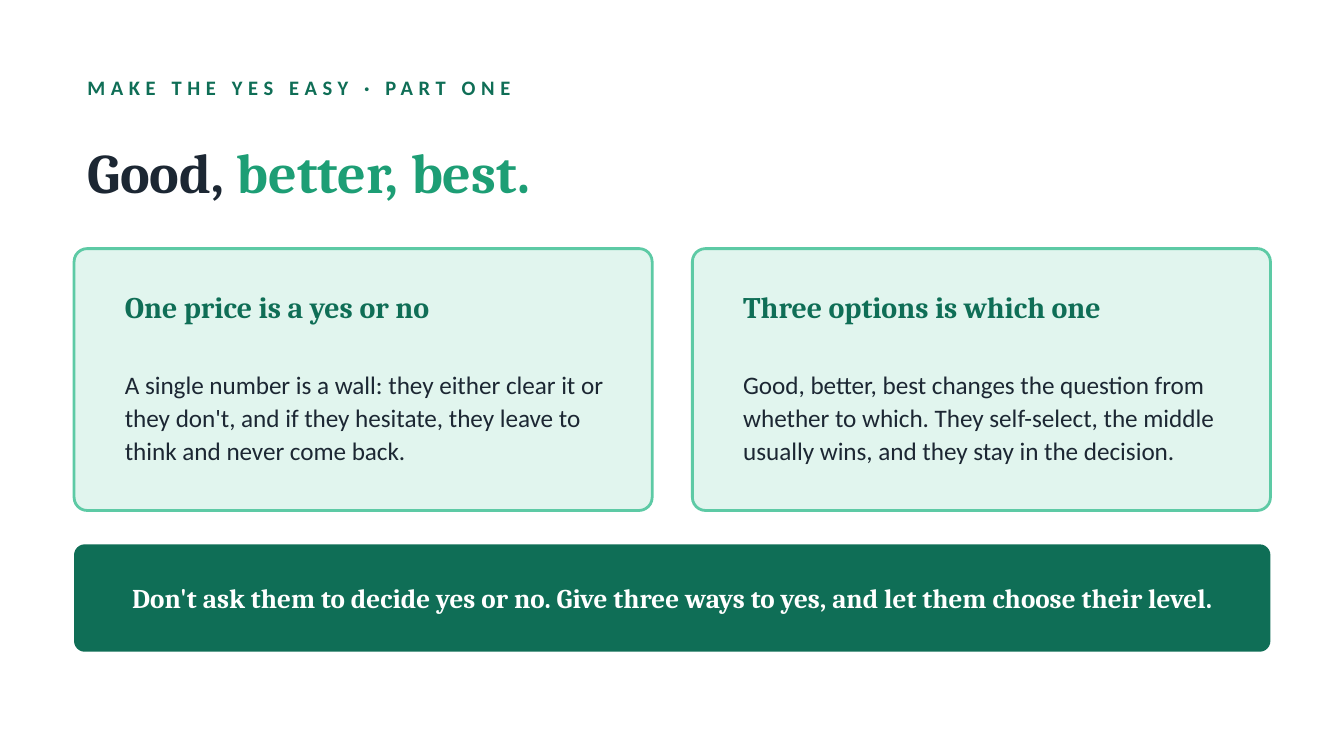
from pptx import Presentation
from pptx.dml.color import RGBColor
from pptx.enum.shapes import MSO_SHAPE
from pptx.enum.text import MSO_ANCHOR, PP_ALIGN
from pptx.util import Cm, Pt

HEAD, BODY = "Cambria", "Calibri"
GREEN, ACCENT, INK = "0F6E56", "1D9E75", "1C2733"
MINT, BORDER, WHITE = "E1F5EE", "5DCAA5", "FFFFFF"

MARGIN, CONTENT_W = 1.4, 22.61
CARD_GAP = 0.76


def rgb(value):
    return RGBColor.from_string(value)


def add_text(s, box, runs, size, font, bold=True, align=PP_ALIGN.LEFT,
             line_spacing=None, tracking=None):
    """Add a one-paragraph text box; runs are (text, colour) pairs."""
    tf = s.shapes.add_textbox(*map(Cm, box)).text_frame
    tf.word_wrap = True
    tf.vertical_anchor = MSO_ANCHOR.MIDDLE
    p = tf.paragraphs[0]
    p.alignment = align
    if line_spacing:
        p.line_spacing = line_spacing
    for text, colour in runs:
        r = p.add_run()
        r.text = text
        r.font.name = font
        r.font.size = Pt(size)
        r.font.bold = bold
        r.font.color.rgb = rgb(colour)
        if tracking:
            r.font._element.set("spc", str(tracking * 100))


def add_panel(s, box, radius, fill, border=None):
    sp = s.shapes.add_shape(MSO_SHAPE.ROUNDED_RECTANGLE, *map(Cm, box))
    sp.adjustments[0] = radius
    sp.shadow.inherit = False
    sp.fill.solid()
    sp.fill.fore_color.rgb = rgb(fill)
    if border:
        sp.line.color.rgb = rgb(border)
        sp.line.width = Pt(1.5)
    else:
        sp.line.fill.background()


def add_header(s, box):
    x, y, w, h = box
    # Eyebrow line
    add_text(s, (x, y, w, 0.76), [("MAKE THE YES EASY · PART ONE", GREEN)],
             11, BODY, tracking=3)
    # Two-colour title, filling the rest of the header
    add_text(s, (x, y + 0.89, w, h - 0.89),
             [("Good, ", INK), ("better, best.", ACCENT)], 30, HEAD)


def add_card(s, box, title, body):
    x, y, w, h = box
    add_panel(s, box, 0.05, MINT, BORDER)
    text_x, text_w = x + 0.71, w - 1.27
    add_text(s, (text_x, y + 0.46, text_w, 1.27), [(title, GREEN)], 16, HEAD)
    add_text(s, (text_x, y + 1.83, text_w, h - 2.28), [(body, INK)],
             13.5, BODY, bold=False, line_spacing=1.1)


def add_banner(s, box, message):
    x, y, w, h = box
    add_panel(s, box, 0.1, GREEN)
    add_text(s, (x + 0.64, y, w - 1.28, h), [(message, WHITE)],
             14.5, HEAD, align=PP_ALIGN.CENTER)


def main():
    prs = Presentation()
    prs.slide_width, prs.slide_height = Cm(25.4), Cm(14.29)
    s = prs.slides.add_slide(prs.slide_layouts[6])
    s.background.fill.solid()
    s.background.fill.fore_color.rgb = rgb(WHITE)

    add_header(s, (MARGIN, 1.27, CONTENT_W, 3.05))

    # Two equal cards side by side
    cards = [
        ("One price is a yes or no",
         "A single number is a wall: they either clear it or they don't, "
         "and if they hesitate, they leave to think and never come back."),
        ("Three options is which one",
         "Good, better, best changes the question from whether to which. "
         "They self-select, the middle usually wins, and they stay in the "
         "decision."),
    ]
    card_w = (CONTENT_W - CARD_GAP) / len(cards)
    for i, (title, body) in enumerate(cards):
        x = MARGIN + i * (card_w + CARD_GAP)
        add_card(s, (x, 4.7, card_w, 4.95), title, body)

    add_banner(s, (MARGIN, 10.29, CONTENT_W, 2.03),
               "Don't ask them to decide yes or no. Give three ways to yes, "
               "and let them choose their level.")
    prs.save("out.pptx")


if __name__ == "__main__":
    main()
